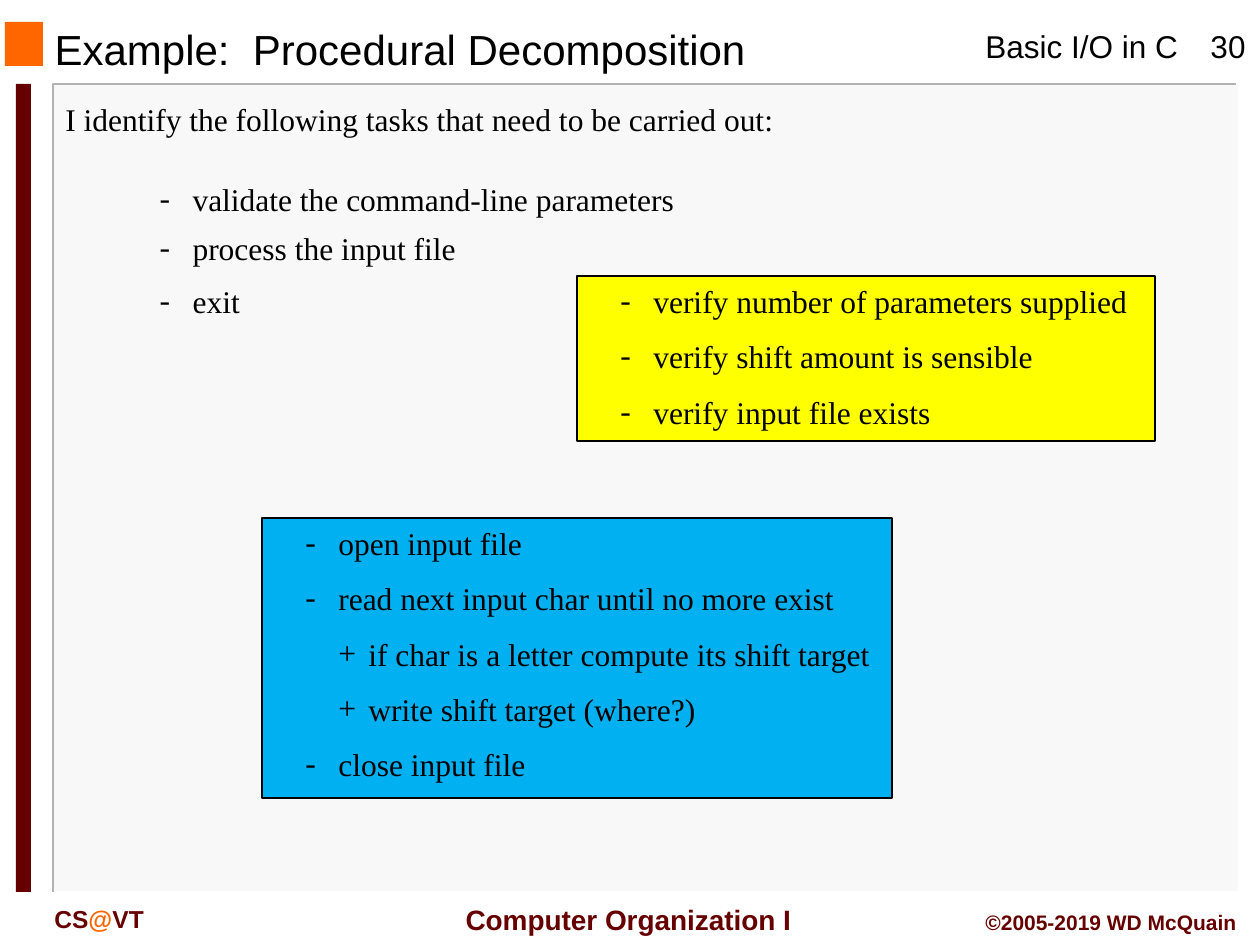
from dataclasses import dataclass

from lxml.etree import SubElement
from pptx import Presentation
from pptx.dml.color import RGBColor
from pptx.enum.shapes import MSO_SHAPE
from pptx.enum.text import MSO_ANCHOR, MSO_AUTO_SIZE, PP_ALIGN
from pptx.oxml.ns import qn
from pptx.util import Inches, Pt

PX = 914400 / 126


@dataclass(frozen=True)
class Theme:
    """Colours, fonts and type sizes of the slide."""
    ink: str = "000000"
    maroon: str = "660000"
    orange: str = "FF6600"
    panel: str = "F8F8F8"
    edge: str = "B2B2B2"
    light: str = "FFFFFF"
    yellow: str = "FFFF00"
    blue: str = "00B0F0"
    sans: str = "Arial"
    serif: str = "Times New Roman"
    title: int = 24
    body: int = 18
    course: int = 16
    school: int = 14
    credit: int = 12


THEME = Theme()
BULLETS = {1: ("-", 64, -33), 2: ("+", 94, -30)}


def px(length):
    """Turn pixels into EMU."""
    return round(length * PX)


def rgb(colour):
    """Turn a hex string into a colour."""
    return RGBColor.from_string(colour)


def place(shape, box):
    """Move and size a shape to left, top, width, height."""
    shape.left, shape.top, shape.width, shape.height = map(px, box)


def add_run(paragraph, text, size, font=THEME.sans, colour=THEME.ink, bold=False):
    """Add one formatted run."""
    run = paragraph.add_run()
    run.text = text
    run.font.name = font
    run.font.size = Pt(size)
    run.font.bold = bold
    run.font.color.rgb = rgb(colour)


def add_label(slide, box, runs, align=PP_ALIGN.LEFT, wrap=True, anchor=MSO_ANCHOR.TOP):
    """Add a one-line text box made of formatted runs."""
    frame = slide.shapes.add_textbox(*map(px, box)).text_frame
    frame.word_wrap = wrap
    frame.vertical_anchor = anchor
    frame.paragraphs[0].alignment = align
    for run in runs:
        add_run(frame.paragraphs[0], **run)


def add_block(slide, box, fill, line=None):
    """Add a flat rectangle."""
    block = slide.shapes.add_shape(MSO_SHAPE.RECTANGLE, *map(px, box))
    block.shadow.inherit = False
    block.fill.solid()
    block.fill.fore_color.rgb = rgb(fill)
    if line:
        block.line.color.rgb = rgb(line)
        block.line.width = Pt(0.75)
    else:
        block.line.fill.background()
    return block


def add_edge(slide, points, colour):
    """Add an open outline through the points."""
    builder = slide.shapes.build_freeform(*points[0], scale=PX)
    builder.add_line_segments(points[1:], close=False)
    edge = builder.convert_to_shape()
    edge.shadow.inherit = False
    edge.fill.background()
    edge.line.color.rgb = rgb(colour)
    edge.line.width = Pt(1)


def fill_list(shape, items):
    """Write bulleted items given as text, level and gap above in points."""
    frame = shape.text_frame
    frame.word_wrap = True
    frame.auto_size = MSO_AUTO_SIZE.NONE
    frame.vertical_anchor = MSO_ANCHOR.TOP
    for index, (text, level, gap) in enumerate(items):
        paragraph = frame.add_paragraph() if index else frame.paragraphs[0]
        paragraph.alignment = PP_ALIGN.LEFT
        paragraph.space_before = Pt(gap if index else 0)
        mark, margin, indent = BULLETS[level]
        properties = paragraph.element.get_or_add_pPr() if hasattr(paragraph, "element") else paragraph._p.get_or_add_pPr()
        properties.set("marL", str(px(margin)))
        properties.set("indent", str(px(indent)))
        SubElement(properties, qn("a:buFont")).set("typeface", THEME.serif)
        SubElement(properties, qn("a:buChar")).set("char", mark)
        add_run(paragraph, text, THEME.body, THEME.serif)


def add_frame(slide):
    """Draw the panel and the accents around it."""
    add_block(slide, (54, 84, 1184, 808), THEME.panel)
    add_edge(slide, [(1236, 84), (53, 84), (53, 892)], THEME.edge)
    add_edge(slide, [(1239, 84), (1239, 892), (55, 892)], THEME.light)
    add_block(slide, (5, 22, 38, 44), THEME.orange)
    add_block(slide, (16, 84, 15, 808), THEME.maroon)


def add_header_and_footer(slide):
    """Write the topic, page number and footer labels."""
    footer = {"colour": THEME.maroon, "bold": True}
    add_label(slide, (973, 21, 220, 50), [{"text": "Basic I/O in C", "size": THEME.body}], wrap=False)
    add_label(slide, (1186, 21, 84, 50), [{"text": "30", "size": THEME.body}], PP_ALIGN.CENTER)
    add_label(slide, (445, 896, 367, 47),
              [{"text": "Computer Organization I", "size": THEME.course, **footer}],
              PP_ALIGN.CENTER, False, MSO_ANCHOR.MIDDLE)
    school = {"size": THEME.school, **footer}
    add_label(slide, (42, 898, 189, 42), [
        {"text": "CS", **school},
        {"text": "@", **school, "colour": THEME.orange},
        {"text": "VT", **school}])
    add_label(slide, (924, 903, 325, 38),
              [{"text": "©2005-2019 WD McQuain", "size": THEME.credit, **footer}], PP_ALIGN.RIGHT)


def add_title(slide, text):
    """Place and write the title placeholder."""
    title = slide.shapes.title
    place(title, (42, 25, 798, 48))
    frame = title.text_frame
    frame.auto_size = MSO_AUTO_SIZE.NONE
    frame.vertical_anchor = MSO_ANCHOR.MIDDLE
    frame.paragraphs[0].alignment = PP_ALIGN.LEFT
    add_run(frame.paragraphs[0], text, THEME.title)


def add_tasks(slide, items):
    """Place the body placeholder above the panel and list the tasks."""
    tasks = slide.placeholders[1]
    tasks.element.getparent().append(tasks.element)
    place(tasks, (116, 174, 1124, 150))
    fill_list(tasks, items)


def main():
    """Build and save the slide."""
    deck = Presentation()
    deck.slide_width, deck.slide_height = Inches(10), Inches(7.5)
    slide = deck.slides.add_slide(deck.slide_layouts[1])
    add_frame(slide)
    add_header_and_footer(slide)
    add_title(slide, "Example:  Procedural Decomposition")
    add_label(slide, (53, 94, 1187, 50), [{
        "text": "I identify the following tasks that need to be carried out:",
        "size": THEME.body, "font": THEME.serif}])
    add_tasks(slide, [
        ("validate the command-line parameters", 1, 0),
        ("process the input file", 1, 6),
        ("exit", 1, 9)])
    fill_list(add_block(slide, (262, 518, 630, 280), THEME.blue, THEME.ink), [
        ("open input file", 1, 10),
        ("read next input char until no more exist", 1, 10),
        ("if char is a letter compute its shift target", 2, 10),
        ("write shift target (where?)", 2, 10),
        ("close input file", 1, 10)])
    fill_list(add_block(slide, (577, 276, 578, 165), THEME.yellow, THEME.ink), [
        ("verify number of parameters supplied", 1, 10),
        ("verify shift amount is sensible", 1, 10),
        ("verify input file exists", 1, 10)])
    deck.save("out.pptx")


if __name__ == "__main__":
    main()
